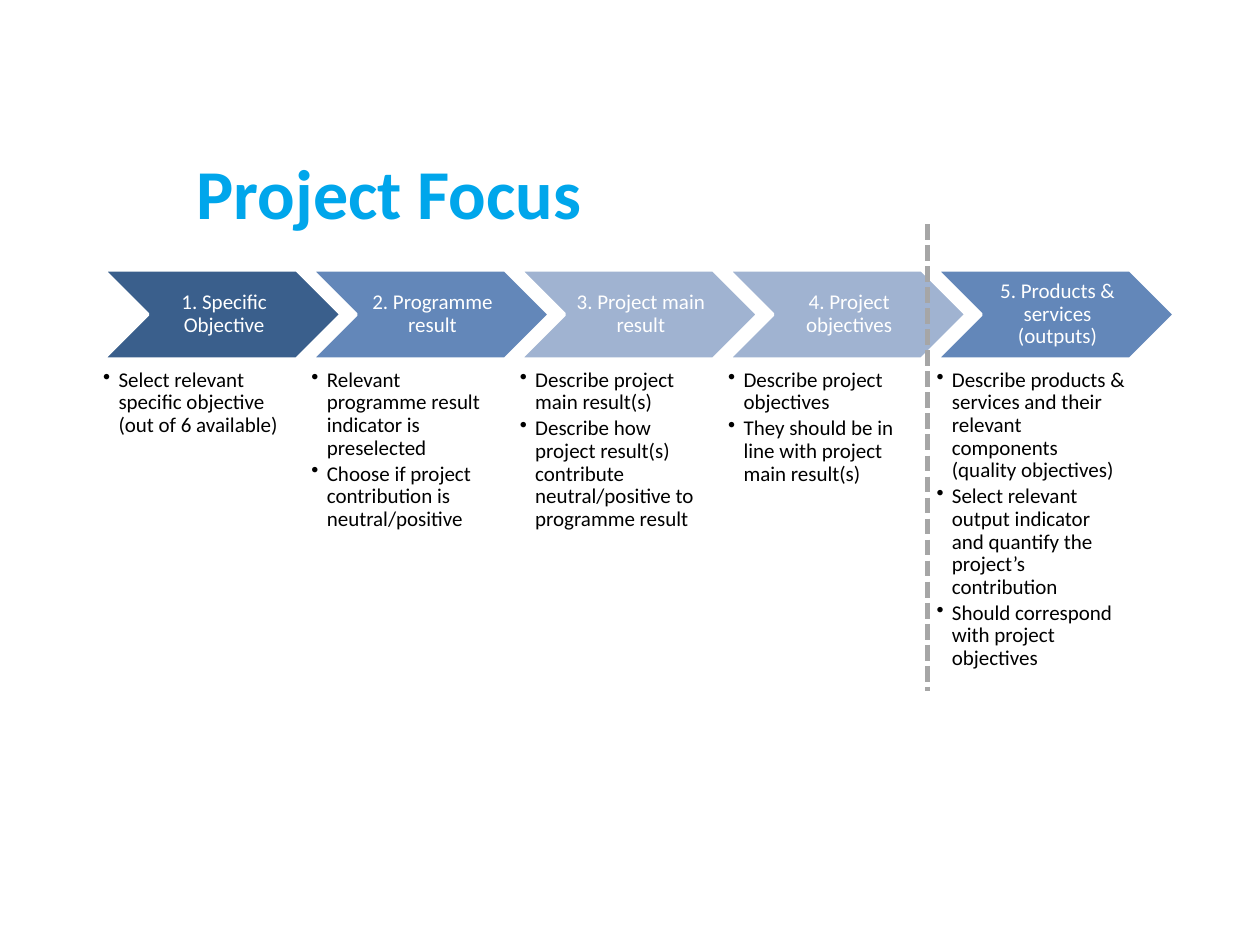
from lxml.etree import SubElement
from pptx import Presentation
from pptx.dml.color import RGBColor
from pptx.enum.dml import MSO_LINE
from pptx.enum.shapes import MSO_CONNECTOR, MSO_SHAPE
from pptx.enum.text import MSO_ANCHOR, MSO_AUTO_SIZE, PP_ALIGN
from pptx.oxml.ns import qn
from pptx.util import Cm, Pt

COLORS = {
    "title": "00A6EB",
    "dark": "3A5F8C",
    "mid": "6387B9",
    "light": "A0B3D1",
    "white": "FFFFFF",
    "black": "000000",
    "gray": "A6A6A6",
}

STEPS = [
    ("1. Specific Objective", "dark",
     ["Select relevant specific objective (out of 6 available)"]),
    ("2. Programme result", "mid",
     ["Relevant programme result indicator is preselected",
      "Choose if project contribution is neutral/positive"]),
    ("3. Project main result", "light",
     ["Describe project main result(s)",
      "Describe how project result(s) contribute neutral/positive to programme result"]),
    ("4. Project objectives", "light",
     ["Describe project objectives",
      "They should be in line with project main result(s)"]),
    ("5. Products & services (outputs)", "mid",
     ["Describe products & services and their relevant components (quality objectives)",
      "Select relevant output indicator and quantify the project’s contribution",
      "Should correspond with project objectives"]),
]

LEFT, PITCH = 2.08, 4.2
TOP, HIGH, WIDE = 5.44, 1.8, 4.8

TITLE = {"size": Pt(40), "bold": True, "name": "Calibri"}
BODY = {"size": Pt(12), "name": "Calibri"}
LABEL = {"alignment": PP_ALIGN.CENTER, "line_spacing": 0.9, "space_after": Pt(4.2)}
ITEM = {"level": 1, "alignment": PP_ALIGN.LEFT, "line_spacing": 0.9,
        "space_before": Pt(0), "space_after": Pt(1.8)}
LABEL_BOX = {"word_wrap": True, "vertical_anchor": MSO_ANCHOR.MIDDLE,
             "margin_left": Cm(0.13), "margin_right": Cm(0.05),
             "margin_top": Cm(0.05), "margin_bottom": Cm(0.05)}
LIST_BOX = {"word_wrap": True, "vertical_anchor": MSO_ANCHOR.TOP,
            "margin_left": 0, "margin_right": 0, "margin_top": 0, "margin_bottom": 0}
TITLE_BOX = {"word_wrap": True, "vertical_anchor": MSO_ANCHOR.MIDDLE,
             "auto_size": MSO_AUTO_SIZE.NONE}


def put(item, values):
    """Set each attribute of an item from a dict."""
    for name, value in values.items():
        setattr(item, name, value)


def color(name):
    """Return the named colour."""
    return RGBColor.from_string(COLORS[name])


def write(para, text, font, tone):
    """Add a formatted run to a paragraph."""
    run = para.add_run()
    run.text = text
    put(run.font, font)
    run.font.color.rgb = color(tone)


def add_title(slide, text):
    """Place and format the title."""
    title = slide.shapes.title
    put(title, {"left": Cm(3.71), "top": Cm(2.82), "width": Cm(18), "height": Cm(2.08)})
    put(title.text_frame, TITLE_BOX)
    para = title.text_frame.paragraphs[0]
    para.alignment = PP_ALIGN.LEFT
    write(para, text, TITLE, "title")


def add_arrow(shapes, left, tone):
    """Add one chevron of the chain."""
    arrow = shapes.add_shape(MSO_SHAPE.CHEVRON, Cm(left), Cm(TOP), Cm(WIDE), Cm(HIGH))
    arrow.shadow.inherit = False
    arrow.fill.solid()
    arrow.fill.fore_color.rgb = color(tone)
    arrow.line.color.rgb = color("white")
    arrow.line.width = Pt(2)


def add_label(shapes, left, text):
    """Add the heading over a chevron."""
    box = shapes.add_textbox(Cm(left + HIGH / 2), Cm(TOP), Cm(WIDE - HIGH), Cm(HIGH))
    put(box.text_frame, LABEL_BOX)
    para = box.text_frame.paragraphs[0]
    put(para, LABEL)
    write(para, text, BODY, "white")


def add_list(shapes, left, items):
    """Add the bullet list below a chevron."""
    box = shapes.add_textbox(Cm(left), Cm(7.44), Cm(WIDE * 0.8), Cm(6.25))
    frame = box.text_frame
    put(frame, LIST_BOX)
    for index, text in enumerate(items):
        para = frame.add_paragraph() if index else frame.paragraphs[0]
        put(para, ITEM)
        props = para._p.get_or_add_pPr()
        props.set("marL", str(Cm(0.31)))
        props.set("indent", str(-Cm(0.31)))
        SubElement(props, qn("a:buChar"), char="•")
        write(para, text, BODY, "black")


def add_rule(slide):
    """Add the dashed line before the last step."""
    rule = slide.shapes.add_connector(
        MSO_CONNECTOR.STRAIGHT, Cm(18.69), Cm(4.52), Cm(18.69), Cm(13.92))
    rule.line.color.rgb = color("gray")
    put(rule.line, {"width": Pt(3), "dash_style": MSO_LINE.SQUARE_DOT})
    SubElement(rule._element.spPr, qn("a:effectLst"))


def main():
    """Build and save the slide."""
    deck = Presentation()
    put(deck, {"slide_width": Cm(25.4), "slide_height": Cm(19.05)})
    slide = deck.slides.add_slide(deck.slide_layouts[5])
    add_title(slide, "Project Focus")
    shapes = slide.shapes.add_group_shape().shapes
    for index, (text, tone, items) in enumerate(STEPS):
        left = LEFT + index * PITCH
        add_arrow(shapes, left, tone)
        add_label(shapes, left, text)
        add_list(shapes, left, items)
    add_rule(slide)
    deck.save("out.pptx")


if __name__ == "__main__":
    main()
